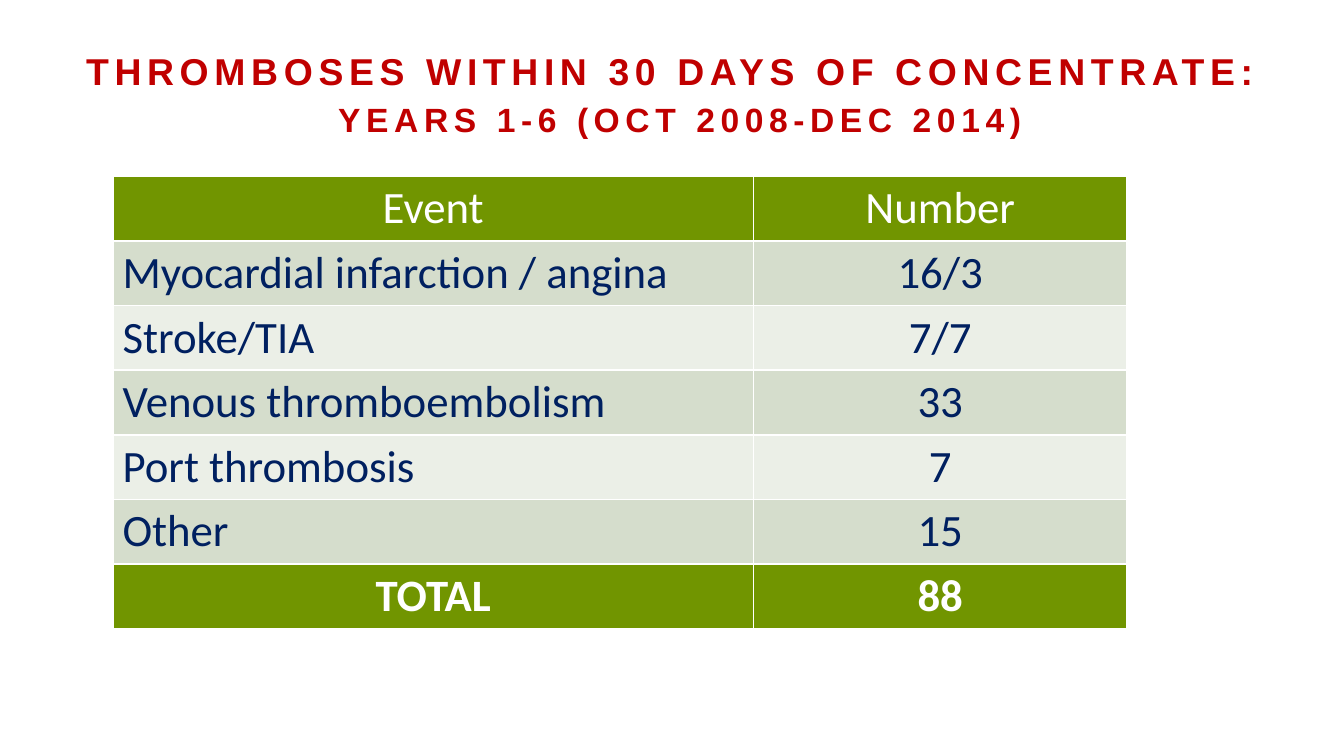
from lxml.etree import SubElement
from pptx import Presentation
from pptx.dml.color import RGBColor
from pptx.enum.text import MSO_ANCHOR, PP_ALIGN
from pptx.oxml.ns import qn
from pptx.util import Pt

RED = RGBColor(0xC0, 0x00, 0x00)
NAVY = RGBColor(0x00, 0x20, 0x60)
WHITE = RGBColor(0xFF, 0xFF, 0xFF)
GREEN = RGBColor(0x71, 0x95, 0x00)
SAGE = RGBColor(0xD5, 0xDD, 0xCC)
MIST = RGBColor(0xEB, 0xEF, 0xE7)

ROWS = [
    ("Event", "Number"),
    ("Myocardial infarction / angina", "16/3"),
    ("Stroke/TIA", "7/7"),
    ("Venous thromboembolism", "33"),
    ("Port thrombosis", "7"),
    ("Other", "15"),
    ("TOTAL", "88"),
]


class Board:
    """Holds the style and the current slide."""

    head_font, body_font = "Arial", "Calibri"
    body_size = 24

    def __init__(self, slide):
        self.slide = slide

    def style(self, run, font, size, color, bold=False):
        run.font.name = font
        run.font.size = Pt(size)
        run.font.color.rgb = color
        run.font.bold = bold

    def title(self, text, sizes, left, top, width, height):
        box = self.slide.shapes.add_textbox(Pt(left), Pt(top), Pt(width), Pt(height))
        frame = box.text_frame
        frame.word_wrap = True
        frame.vertical_anchor = MSO_ANCHOR.MIDDLE
        para = frame.paragraphs[0]
        para.text = text
        para.alignment = PP_ALIGN.CENTER
        para.line_spacing = 1.15
        for run, size in zip(para.runs, sizes):
            self.style(run, self.head_font, size, RED, True)
            run.font._element.set("spc", "300")

    def border(self, cell, side, width):
        line = SubElement(cell._tc.get_or_add_tcPr(), qn("a:" + side), w=str(Pt(width)))
        fill = SubElement(line, qn("a:solidFill"))
        SubElement(fill, qn("a:srgbClr"), val=str(WHITE))

    def cell(self, cell, text, fill, color, bold, center, edges):
        cell.margin_left = cell.margin_right = Pt(5.2)
        cell.margin_top = cell.margin_bottom = Pt(2.6)
        # Borders must come before the fill
        for side, width in edges.items():
            self.border(cell, side, width)
        cell.fill.solid()
        cell.fill.fore_color.rgb = fill
        para = cell.text_frame.paragraphs[0]
        para.text = text
        para.alignment = PP_ALIGN.CENTER if center else PP_ALIGN.LEFT
        self.style(para.runs[0], self.body_font, self.body_size, color, bold)

    def table(self, rows, left, top, widths, height):
        last = len(rows) - 1
        grid = self.slide.shapes.add_table(
            len(rows), len(widths), Pt(left), Pt(top),
            Pt(sum(widths)), Pt(height * len(rows))).table
        for col, width in zip(grid.columns, widths):
            col.width = Pt(width)
        for r, row in enumerate(rows):
            grid.rows[r].height = Pt(height)
            strong = r in (0, last)
            fill = GREEN if strong else SAGE if r % 2 else MIST
            edges = {"lnL": 1, "lnR": 1, "lnT": 1, "lnB": 1}
            for c, text in enumerate(row):
                self.cell(grid.cell(r, c), text, fill, WHITE if strong else NAVY,
                          r == last, strong or c > 0, edges)


def main():
    deck = Presentation()
    deck.slide_width, deck.slide_height = Pt(720), Pt(405)
    board = Board(deck.slides.add_slide(deck.slide_layouts[6]))

    # Heading
    board.title("THROMBOSES WITHIN 30 DAYS OF CONCENTRATE:\v YEARS 1-6 (OCT 2008-DEC 2014)",
                (20, 18), 36.5, 17, 648, 63)

    # Event counts
    board.table(ROWS, 60.5, 94.6, (343.2, 200), 34.6)

    deck.save("out.pptx")


if __name__ == "__main__":
    main()
